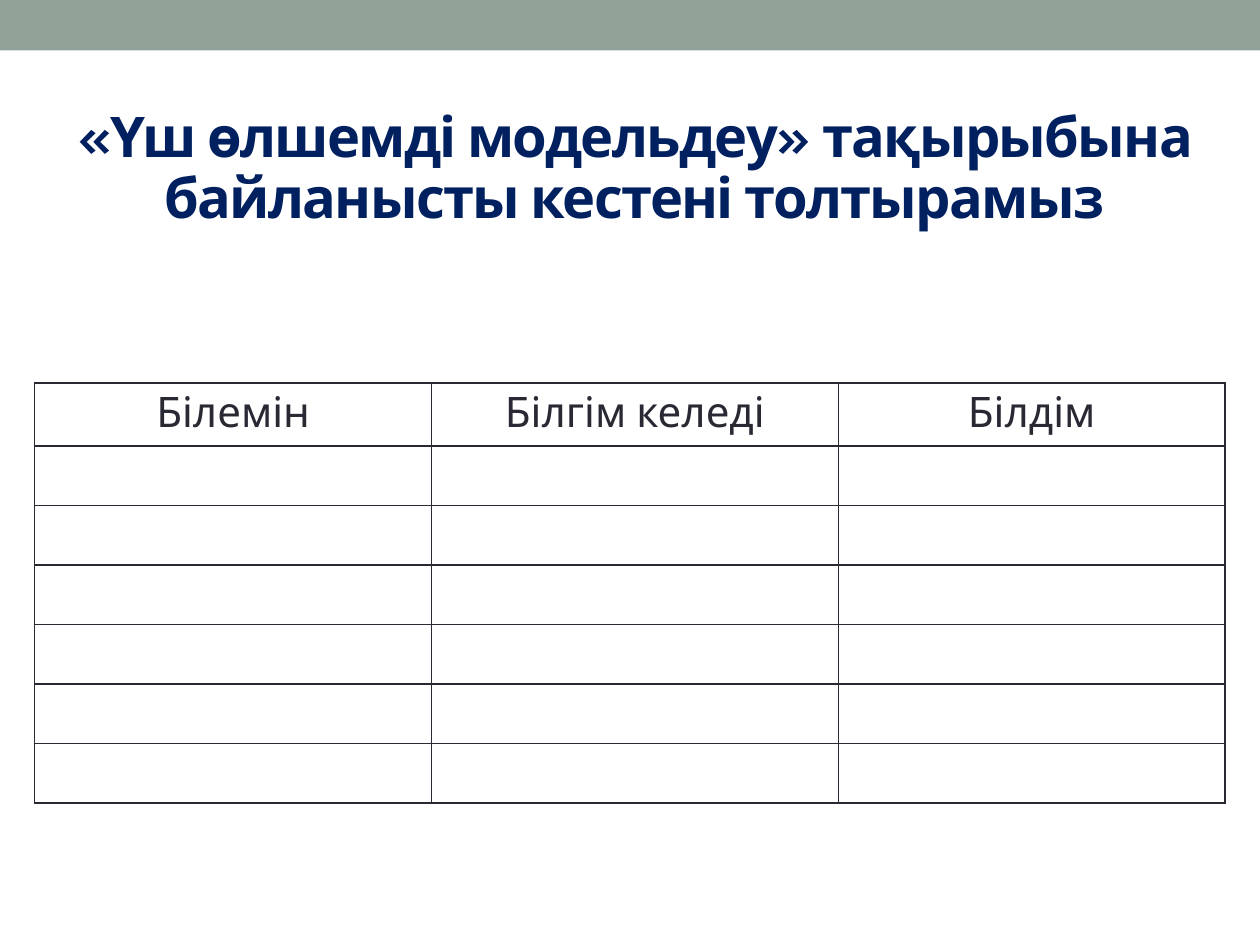
from dataclasses import dataclass

from lxml.etree import SubElement
from pptx import Presentation
from pptx.dml.color import RGBColor
from pptx.enum.shapes import MSO_SHAPE
from pptx.enum.text import MSO_ANCHOR, PP_ALIGN
from pptx.oxml.ns import qn
from pptx.slide import Slide
from pptx.table import _Cell
from pptx.util import Cm, Pt

FONT = "Karla"
SAGE = RGBColor(0x93, 0xA2, 0x99)
NAVY = RGBColor(0x00, 0x20, 0x60)
INK = RGBColor(0x29, 0x29, 0x34)
BODY_ROWS = 6
HEADER_HEIGHT = Cm(1.25)
ROW_HEIGHT = Cm(1.2)


@dataclass(frozen=True)
class Column:
    heading: str
    width: Cm


COLUMNS = [
    Column("Білемін", Cm(8)),
    Column("Білгім келеді", Cm(8.2)),
    Column("Білдім", Cm(7.8)),
]


def add_band(s: Slide, width: int) -> None:
    band = s.shapes.add_shape(MSO_SHAPE.RECTANGLE, 0, 0, width, Cm(1.02))
    band.shadow.inherit = False
    band.fill.solid()
    band.fill.fore_color.rgb = SAGE
    band.line.fill.background()


def add_title(s: Slide, text: str) -> None:
    sp = s.shapes.add_textbox(Cm(1.27), Cm(0.94), Cm(23.04), Cm(4.98))
    tf = sp.text_frame
    tf.word_wrap = True
    tf.vertical_anchor = MSO_ANCHOR.MIDDLE
    p = tf.paragraphs[0]
    p.alignment = PP_ALIGN.CENTER
    p.line_spacing = 0.9
    p.font.name = FONT
    p.font.size = Pt(32)
    p.font.bold = True
    p.font.color.rgb = NAVY
    r = p.add_run()
    r.text = text
    r.font._element.set("spc", "-100")


def style_cell(cell: _Cell) -> None:
    tc_pr = cell._tc.get_or_add_tcPr()
    for side in ("a:lnL", "a:lnR", "a:lnT", "a:lnB"):
        ln = SubElement(tc_pr, qn(side), w=str(Pt(1)))
        fill = SubElement(ln, qn("a:solidFill"))
        SubElement(fill, qn("a:srgbClr"), val=str(INK))
    cell.fill.background()


def add_grid(s: Slide, columns: list[Column]) -> None:
    width = sum(c.width for c in columns)
    height = HEADER_HEIGHT + BODY_ROWS * ROW_HEIGHT
    table = s.shapes.add_table(
        BODY_ROWS + 1, len(columns), Cm(0.7), Cm(7.72), width, height
    ).table
    table.first_row = False
    table.horz_banding = False
    for i, row in enumerate(table.rows):
        row.height = ROW_HEIGHT if i else HEADER_HEIGHT
    for i, column in enumerate(columns):
        table.columns[i].width = column.width
        p = table.cell(0, i).text_frame.paragraphs[0]
        p.text = column.heading
        p.alignment = PP_ALIGN.CENTER
        p.font.name = FONT
        p.font.size = Pt(24)
        p.font.color.rgb = INK
    for cell in table.iter_cells():
        style_cell(cell)


def main() -> None:
    prs = Presentation()
    prs.slide_width = Cm(25.4)
    prs.slide_height = Cm(19.05)
    s = prs.slides.add_slide(prs.slide_layouts[6])
    add_band(s, prs.slide_width)
    add_title(s, "«Үш өлшемді модельдеу» тақырыбына байланысты кестені толтырамыз")
    add_grid(s, COLUMNS)
    prs.save("out.pptx")


if __name__ == "__main__":
    main()
